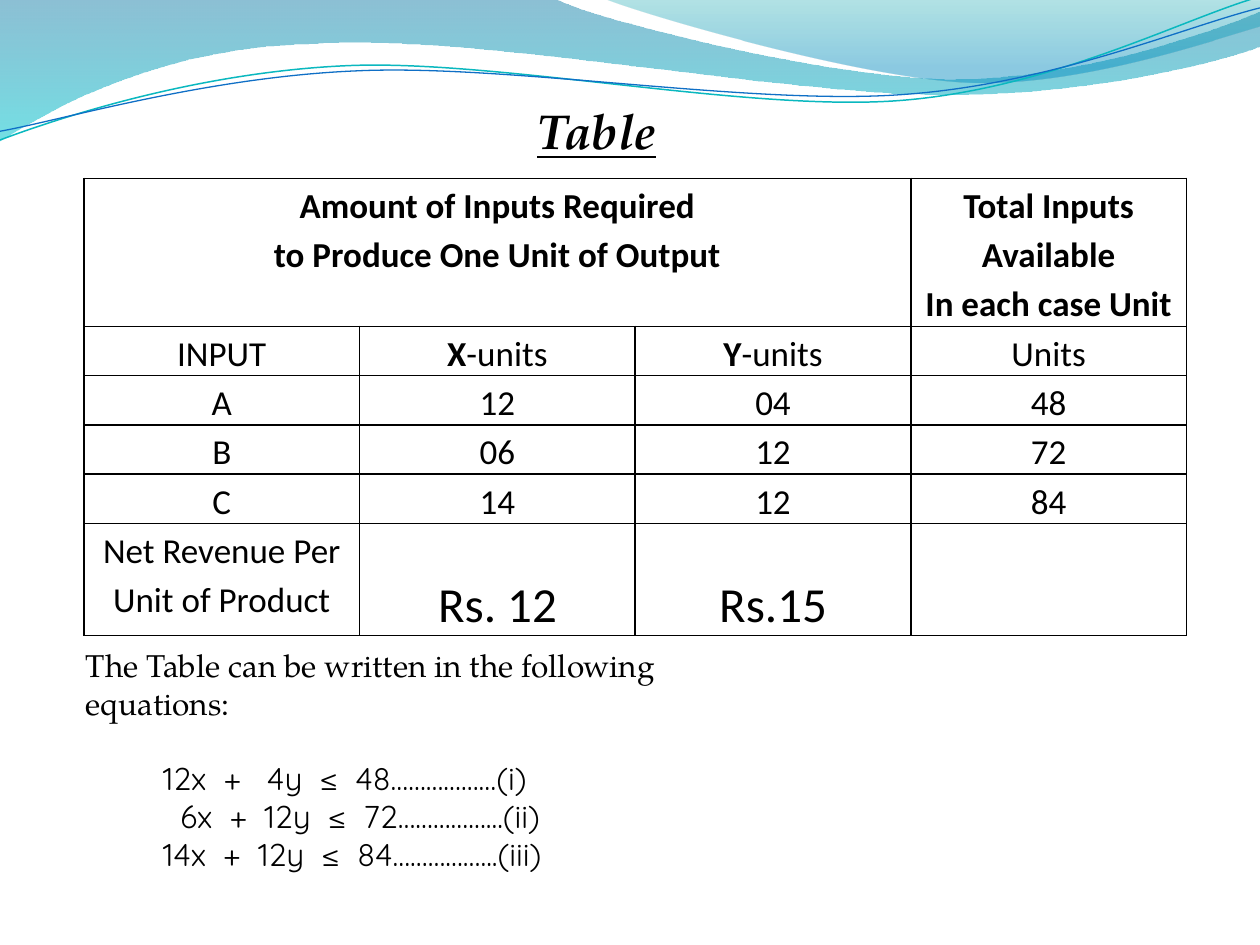
from lxml import etree
from pptx import Presentation
from pptx.dml.color import RGBColor
from pptx.enum import text
from pptx.oxml.ns import qn
from pptx.util import Pt

THEME = {
    "ink": "000000", "table": "Calibri", "prose": "TeX Gyre Pagella",
    "maths": "Quicksand", "body": 18, "cell": 20, "big": 28,
}

# Each wave: start point, then line ends (x, y) or curves (two handles and an end)
BANDS = [
    ([(0, 0), (317, -1), (343, 12, 478, 45, 546, 45),
      (614, 45, 690, 19, 720, 6.5), (721, 26),
      (708, 32, 626, 55, 537, 54), (446, 54, 275, 20, 185, 24.5),
      (93, 26, 33, 60, -0.7, 81)],
     [(0, "0074A1", 45), (1, "00C6CF", 55)]),
    ([(345, -1), (366.5, 8, 491, 44.5, 553.5, 47),
      (616, 49.5, 692, 23, 720, 15), (720, 0)],
     [(0, "00A1A9", 30), (0.8, "008BBF", 45)]),
]
LINES = [
    ([(0, 80), (34.5, 67, 114, 41, 199.5, 37.5),
      (284.5, 34, 427, 64, 513.5, 57.5),
      (600, 51, 675.5, 11, 718.5, -1.5)], "0AB8BF", 0.85),
    ([(0, 75), (34, 69, 118, 44, 204, 40.5),
      (290, 36.5, 430, 60.5, 516, 54),
      (602, 48, 677.5, 15, 720, 4.5)], "0F6FC6", 0.75),
]

TITLE = "Table"
HEAD = [["Amount of Inputs Required", "to Produce One Unit of Output"], [], [],
        ["Total Inputs Available", "In each case Unit"]]
ROWS = [
    ["INPUT", "X-units", "Y-units", "Units"],
    ["A", "12", "04", "48"],
    ["B", "06", "12", "72"],
    ["C", "14", "12", "84"],
    ["Net Revenue Per Unit of Product", "Rs. 12", "Rs.15", ""],
]
HEIGHTS = [84.5, 28, 28, 28, 28, 64]
INTRO = "The Table can be written in the following equations:"
SUMS = [  # indent, words
    (44, "12x  +   4y  ≤  48………………(i)"),
    (54, "6x  +  12y  ≤  72……………...(ii)"),
    (44, "14x  +  12y  ≤  84……………...(iii)"),
]


def rgb(code):
    return RGBColor.from_string(code)


def wave(slide, steps, close):
    """Draw the outline through the end points, then bend its curved steps."""
    ends = [(Pt(s[-2]), Pt(s[-1])) for s in steps]
    pen = slide.shapes.build_freeform(*ends[0])
    pen.add_line_segments(ends[1:], close=close)
    shape = pen.convert_to_shape()
    shape.shadow.inherit = False
    sides = list(shape._element.iter(qn("a:lnTo")))
    for side, step in zip(sides, steps[1:]):
        if len(step) == 6:
            side.tag = qn("a:cubicBezTo")
            for n in (0, 2):
                spot = etree.Element(qn("a:pt"),
                                     x=str(Pt(step[n]) - shape.left),
                                     y=str(Pt(step[n + 1]) - shape.top))
                side.insert(n // 2, spot)
    return shape


def band(slide, steps, tints):
    shape = wave(slide, steps, True)
    shape.line.fill.background()
    fill = shape.fill
    fill.gradient()
    fill.gradient_angle = 270
    for stop, (pos, code, _) in zip(fill.gradient_stops, tints):
        stop.position = pos
        stop.color.rgb = rgb(code)
    for tint, (_, _, alpha) in zip(shape._element.iter(qn("a:srgbClr")), tints):
        etree.SubElement(tint, qn("a:alpha"), val=str(alpha * 1000))


def curve(slide, steps, code, width):
    shape = wave(slide, steps, False)
    shape.fill.background()
    shape.line.color.rgb = rgb(code)
    shape.line.width = Pt(width)


def style(para, face, size, bold=False):
    font = para.font
    font.name, font.size, font.bold = face, Pt(size), bold
    font.color.rgb = rgb(THEME["ink"])
    return font


def border(cell):
    props = cell._tc.get_or_add_tcPr()
    for n, side in enumerate(("lnL", "lnR", "lnT", "lnB")):
        line = etree.Element(qn("a:" + side), w=str(Pt(1)))
        fill = etree.SubElement(line, qn("a:solidFill"))
        etree.SubElement(fill, qn("a:srgbClr"), val=THEME["ink"])
        props.insert(n, line)


def write(cell, lines, size, bold):
    cell.margin_left = cell.margin_right = Pt(5)
    cell.margin_top = cell.margin_bottom = 0
    cell.fill.background()
    border(cell)
    frame = cell.text_frame
    for n, words in enumerate(lines):
        para = frame.add_paragraph() if n else frame.paragraphs[0]
        para.alignment = text.PP_ALIGN.CENTER
        para.line_spacing = 1.15
        style(para, THEME["table"], size, bold)
        if words.endswith("-units"):
            lead = para.add_run()
            lead.text, words = words[0], words[1:]
            lead.font.bold = True
        if words:
            para.add_run().text = words


def grid(slide):
    table = slide.shapes.add_table(len(HEIGHTS), 4, Pt(48), Pt(102),
                                   Pt(630), Pt(sum(HEIGHTS))).table
    table.first_row = table.horz_banding = False
    for row, high in zip(table.rows, HEIGHTS):
        row.height = Pt(high)
    for c, lines in enumerate(HEAD):
        write(table.cell(0, c), lines, THEME["cell"], True)
    table.cell(0, 0).merge(table.cell(0, 2))
    for r, row in enumerate(ROWS, 1):
        for c, words in enumerate(row):
            cell = table.cell(r, c)
            price = words.startswith("Rs.")
            write(cell, [words], THEME["big" if price else "cell"], False)
            if price:
                cell.vertical_anchor = text.MSO_ANCHOR.BOTTOM


def box(slide, left, top, width, height, wrap):
    frame = slide.shapes.add_textbox(
        Pt(left), Pt(top), Pt(width), Pt(height)).text_frame
    frame.word_wrap = wrap
    return frame


def notes(slide):
    frame = box(slide, 42, 365.75, 423.5, 181.5, True)
    para = frame.paragraphs[0]
    para.text = INTRO
    style(para, THEME["prose"], THEME["body"])
    for n, (indent, words) in enumerate(SUMS):
        para = frame.add_paragraph()
        para.text = words
        para.space_before = Pt(0 if n else 21.5)
        para._p.get_or_add_pPr().set("marL", str(Pt(indent)))
        style(para, THEME["maths"], THEME["body"])


def main():
    deck = Presentation()
    deck.slide_width, deck.slide_height = Pt(720), Pt(540)
    slide = deck.slides.add_slide(deck.slide_layouts[6])
    for item in BANDS:
        band(slide, *item)
    for item in LINES:
        curve(slide, *item)
    grid(slide)
    notes(slide)
    para = box(slide, 300, 54, 86, 41, False).paragraphs[0]
    para.text = TITLE
    font = style(para, THEME["prose"], THEME["big"], True)
    font.italic = font.underline = True
    deck.save("out.pptx")


if __name__ == "__main__":
    main()
